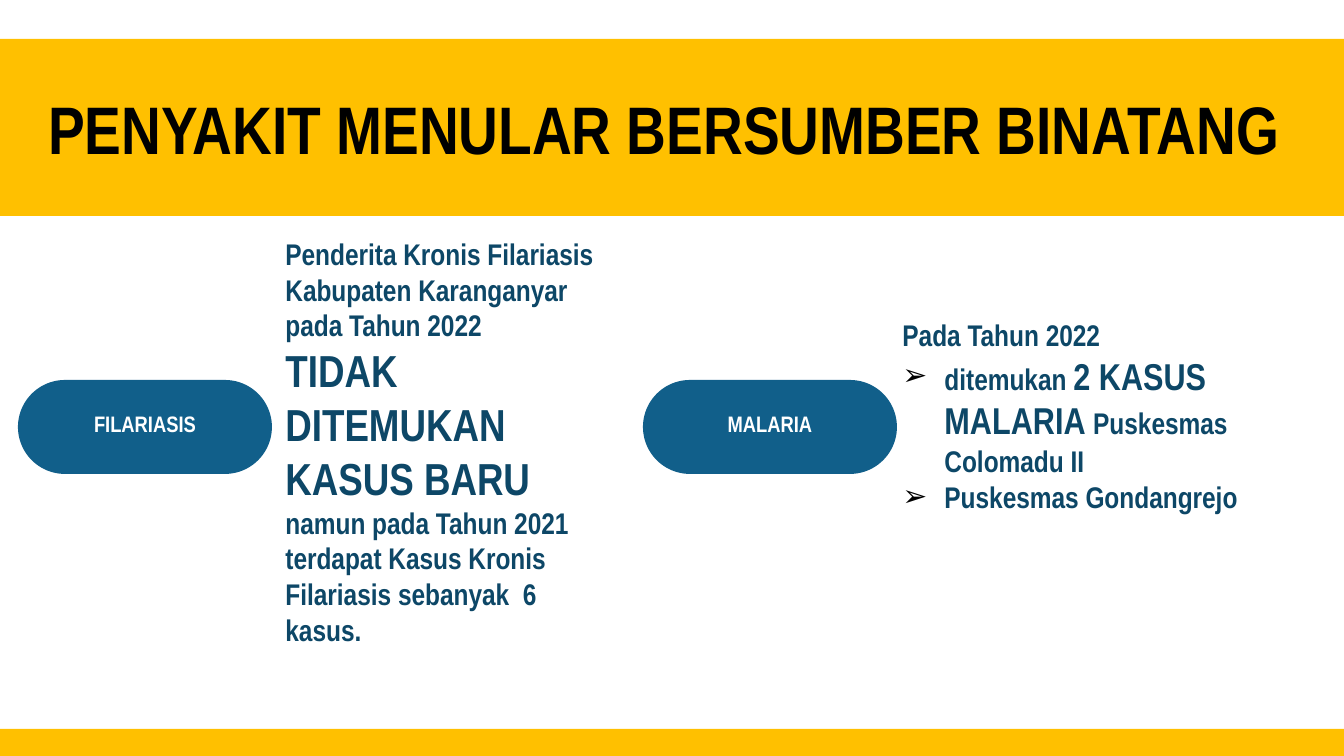
from lxml import etree
from pptx import Presentation, util as u
from pptx.dml.color import RGBColor
from pptx.enum import shapes, text
from pptx.oxml.ns import qn

PX = 914400 / 134.4
FONT = "Arial Narrow"
YELLOW, BLUE, NAVY, BLACK, WHITE = "FFC000", "115F8A", "0D4767", "000000", "FFFFFF"

FILARIASIS = [
    [("Penderita Kronis Filariasis Kabupaten Karanganyar pada Tahun 2022", 16)],
    [("TIDAK DITEMUKAN", 24)],
    [("KASUS BARU", 24)],
    [("namun pada Tahun 2021 terdapat Kasus Kronis Filariasis sebanyak  6 kasus.", 16)],
]
MALARIA = [
    [("Pada Tahun 2022", 16)],
    [("ditemukan ", 16), ("2 KASUS MALARIA ", 20), ("Puskesmas Colomadu II", 16)],
    [("Puskesmas Gondangrejo", 16)],
]


def px(n):
    """Turn pixels into EMU."""
    return u.Emu(round(n * PX))


def colour(hex_code):
    """Turn a hex string into a colour."""
    return RGBColor.from_string(hex_code)


def place(sp, box):
    """Move and size a shape to left, top, width, height in pixels."""
    sp.left, sp.top, sp.width, sp.height = map(px, box)


def paint(sp, fill):
    """Give a shape a solid fill without an outline."""
    sp.fill.solid()
    sp.fill.fore_color.rgb = colour(fill)
    sp.line.fill.background()


def add_block(parent, kind, box, fill):
    """Add a plain filled shape."""
    sp = parent.add_shape(kind, *map(px, box))
    sp.shadow.inherit = False
    paint(sp, fill)
    return sp


def set_frame(sp):
    """Prepare a wrapping, vertically centred text frame and return it."""
    tf = sp.text_frame
    tf.word_wrap = True
    tf.auto_size = text.MSO_AUTO_SIZE.NONE
    tf.vertical_anchor = text.MSO_ANCHOR.MIDDLE
    tf.margin_left = tf.margin_right = tf.margin_top = tf.margin_bottom = u.Inches(0.1)
    return tf


def write(p, content, size=16, color=NAVY, align=None):
    """Add a bold run to a paragraph."""
    if align is not None:
        p.alignment = align
    r = p.add_run()
    r.text = content
    r.font.name, r.font.size, r.font.bold = FONT, u.Pt(size), True
    r.font.color.rgb = colour(color)


def set_bullet(p, char=None, indent=0):
    """Set or clear the bullet and hanging indent of a paragraph."""
    pPr = p._p.get_or_add_pPr()
    pPr.set("marL", str(px(indent)))
    pPr.set("indent", str(-px(indent)))
    if char is None:
        etree.SubElement(pPr, qn("a:buNone"))
        return
    clr = etree.SubElement(pPr, qn("a:buClr"))
    etree.SubElement(clr, qn("a:srgbClr"), val=BLACK)
    etree.SubElement(pPr, qn("a:buFont"), typeface="Arial")
    etree.SubElement(pPr, qn("a:buChar"), char=char)


def fill_title(sp, content, box):
    """Turn the title placeholder into the header band."""
    place(sp, box)
    paint(sp, YELLOW)
    p = set_frame(sp).paragraphs[0]
    write(p, content, size=36, color=BLACK, align=text.PP_ALIGN.CENTER)


def fill_body(sp, paragraphs, box, bulleted=()):
    """Fill a body placeholder with paragraphs of sized runs."""
    place(sp, box)
    tf = set_frame(sp)
    for i, runs in enumerate(paragraphs):
        p = tf.paragraphs[0] if i == 0 else tf.add_paragraph()
        p.alignment = text.PP_ALIGN.LEFT
        p.space_before = p.space_after = u.Pt(0)
        if i in bulleted:
            set_bullet(p, "➢", 42)
        else:
            set_bullet(p)
        for content, size in runs:
            write(p, content, size=size)


def add_pill(s, label, left):
    """Add a grouped pill with its label."""
    group = s.shapes.add_group_shape().shapes
    pill = add_block(group, shapes.MSO_SHAPE.ROUNDED_RECTANGLE, (left, 380, 254, 94), BLUE)
    pill.adjustments[0] = 0.5
    tb = group.add_textbox(*map(px, (left + 15, 403, 224, 42)))
    p = set_frame(tb).paragraphs[0]
    write(p, label, size=12, color=WHITE, align=text.PP_ALIGN.CENTER)


def main():
    """Build and save the slide."""
    prs = Presentation()
    prs.slide_width, prs.slide_height = px(1344), px(756)
    s = prs.slides.add_slide(prs.slide_layouts[3])
    fill_title(s.shapes.title, "PENYAKIT MENULAR BERSUMBER BINATANG ", (0, 39, 1344, 177))
    fill_body(s.placeholders[1], FILARIASIS, (272, 416, 356, 51))
    fill_body(s.placeholders[2], MALARIA, (889, 390, 464, 51), bulleted=(1, 2))
    add_block(s.shapes, shapes.MSO_SHAPE.RECTANGLE, (0, 729, 1344, 27), YELLOW)
    add_pill(s, "FILARIASIS", 18)
    add_pill(s, "MALARIA", 643)
    prs.save("out.pptx")


if __name__ == "__main__":
    main()
